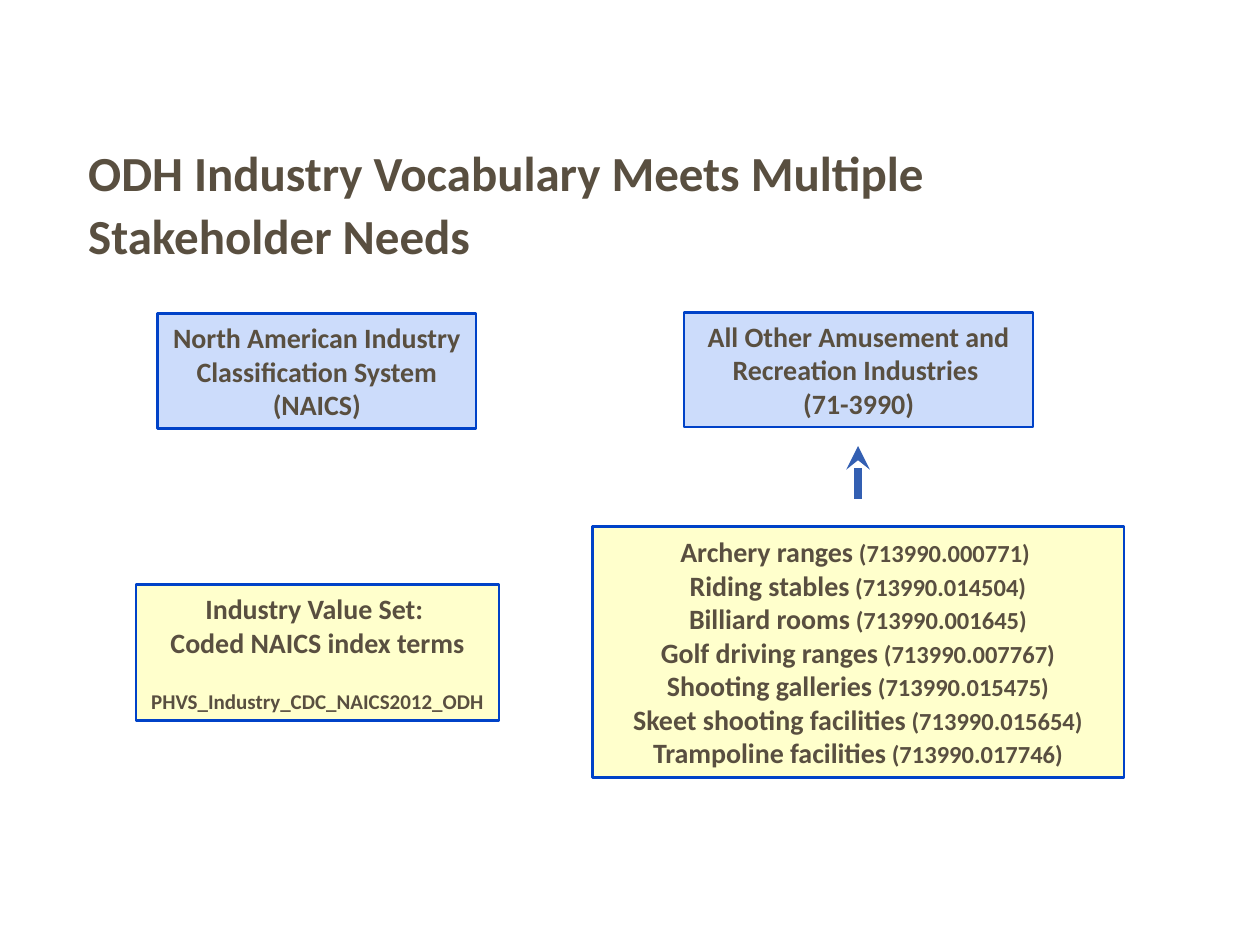
from lxml import etree
from pptx import Presentation
from pptx.dml.color import RGBColor
from pptx.enum.dml import MSO_LINE
from pptx.enum.shapes import MSO_CONNECTOR, MSO_SHAPE
from pptx.enum.text import MSO_ANCHOR, MSO_AUTO_SIZE, PP_ALIGN
from pptx.oxml.ns import qn
from pptx.util import Inches, Pt

RECTANGLE = MSO_SHAPE.RECTANGLE
STRAIGHT = MSO_CONNECTOR.STRAIGHT
DASH = MSO_LINE.DASH
BOTTOM, MIDDLE = MSO_ANCHOR.BOTTOM, MSO_ANCHOR.MIDDLE
LEFT, CENTER = PP_ALIGN.LEFT, PP_ALIGN.CENTER
FIT_SHAPE, NO_FIT = MSO_AUTO_SIZE.SHAPE_TO_FIT_TEXT, MSO_AUTO_SIZE.NONE
TITLE_ONLY = 5

TEXT, BORDER, ARROW = "594F40", "0042C8", "335FB2"
BLUE, YELLOW = "CCDCFB", "FFFFCC"

# Each industry term with its code; the first code keeps a trailing space
INDUSTRIES = [
    ("Archery ranges", " (713990.000771) "),
    ("Riding stables", " (713990.014504)"),
    ("Billiard rooms", " (713990.001645)"),
    ("Golf driving ranges", " (713990.007767)"),
    ("Shooting galleries", " (713990.015475)"),
    ("Skeet shooting facilities", " (713990.015654)"),
    ("Trampoline facilities", " (713990.017746)"),
]


def color(value):
    return RGBColor.from_string(value)


def format_run(run, size):
    run.font.name = "Calibri"
    run.font.size = Pt(size)
    run.font.bold = True
    run.font.color.rgb = color(TEXT)


def add_title(slide, text):
    title = slide.shapes.title
    title.left, title.top = Inches(0.6), Inches(1.21)
    title.width, title.height = Inches(8.8), Inches(0.94)
    frame = title.text_frame
    frame.text = text
    frame.vertical_anchor = BOTTOM
    frame.auto_size = NO_FIT
    paragraph = frame.paragraphs[0]
    paragraph.alignment = LEFT
    paragraph.line_spacing = 1.08
    format_run(paragraph.runs[0], 28)


def add_box(slide, left, top, width, height, fill, lines):
    """Add a bordered box; each line is a list of (text, size) runs."""
    box = slide.shapes.add_shape(
        RECTANGLE, Inches(left), Inches(top), Inches(width), Inches(height))
    box.shadow.inherit = False
    box.fill.solid()
    box.fill.fore_color.rgb = color(fill)
    box.line.color.rgb = color(BORDER)
    box.line.width = Pt(1.5)

    frame = box.text_frame
    frame.word_wrap = True
    frame.vertical_anchor = MIDDLE
    frame.auto_size = FIT_SHAPE
    for index, line in enumerate(lines):
        paragraph = frame.add_paragraph() if index else frame.paragraphs[0]
        paragraph.alignment = CENTER
        for text, size in line:
            run = paragraph.add_run()
            run.text = text
            format_run(run, size)
    return box


def add_up_arrow(slide, x, start, end):
    arrow = slide.shapes.add_connector(
        STRAIGHT, Inches(x), Inches(start), Inches(x), Inches(end))
    arrow.line.color.rgb = color(ARROW)
    arrow.line.width = Pt(4.5)
    arrow.line.dash_style = DASH
    outline = arrow.line._get_or_add_ln()
    etree.SubElement(outline, qn("a:tailEnd"), type="stealth")
    etree.SubElement(arrow._element.spPr, qn("a:effectLst"))


def main():
    presentation = Presentation()
    presentation.slide_width = Inches(10)
    presentation.slide_height = Inches(7.5)
    slide = presentation.slides.add_slide(
        presentation.slide_layouts[TITLE_ONLY])

    add_title(slide, "ODH Industry Vocabulary Meets Multiple Stakeholder Needs")

    # Example: category above, its index terms below
    add_box(slide, 5.43, 2.48, 2.77, 0.91, BLUE, [
        [("All Other Amusement and Recreation Industries ", 16)],
        [("(71-3990)", 16)],
    ])
    add_box(slide, 4.7, 4.18, 4.22, 1.99, YELLOW,
            [[(name, 16), (code, 14)] for name, code in INDUSTRIES])

    # Classification system and its value set
    add_box(slide, 1.25, 2.49, 2.53, 0.91, BLUE, [
        [("North American Industry Classification System (NAICS)", 16)],
    ])
    value_set = add_box(slide, 1.08, 4.64, 2.88, 1.08, YELLOW, [
        [("Industry Value Set: ", 16)],
        [("Coded NAICS index terms", 16)],
        [("PHVS_Industry_CDC_NAICS2012_ODH", 12)],
    ])
    value_set.text_frame.paragraphs[-1].space_before = Pt(17)

    # Index terms roll up to the category
    add_up_arrow(slide, 6.81, 3.96, 3.54)

    presentation.save("out.pptx")


if __name__ == "__main__":
    main()
